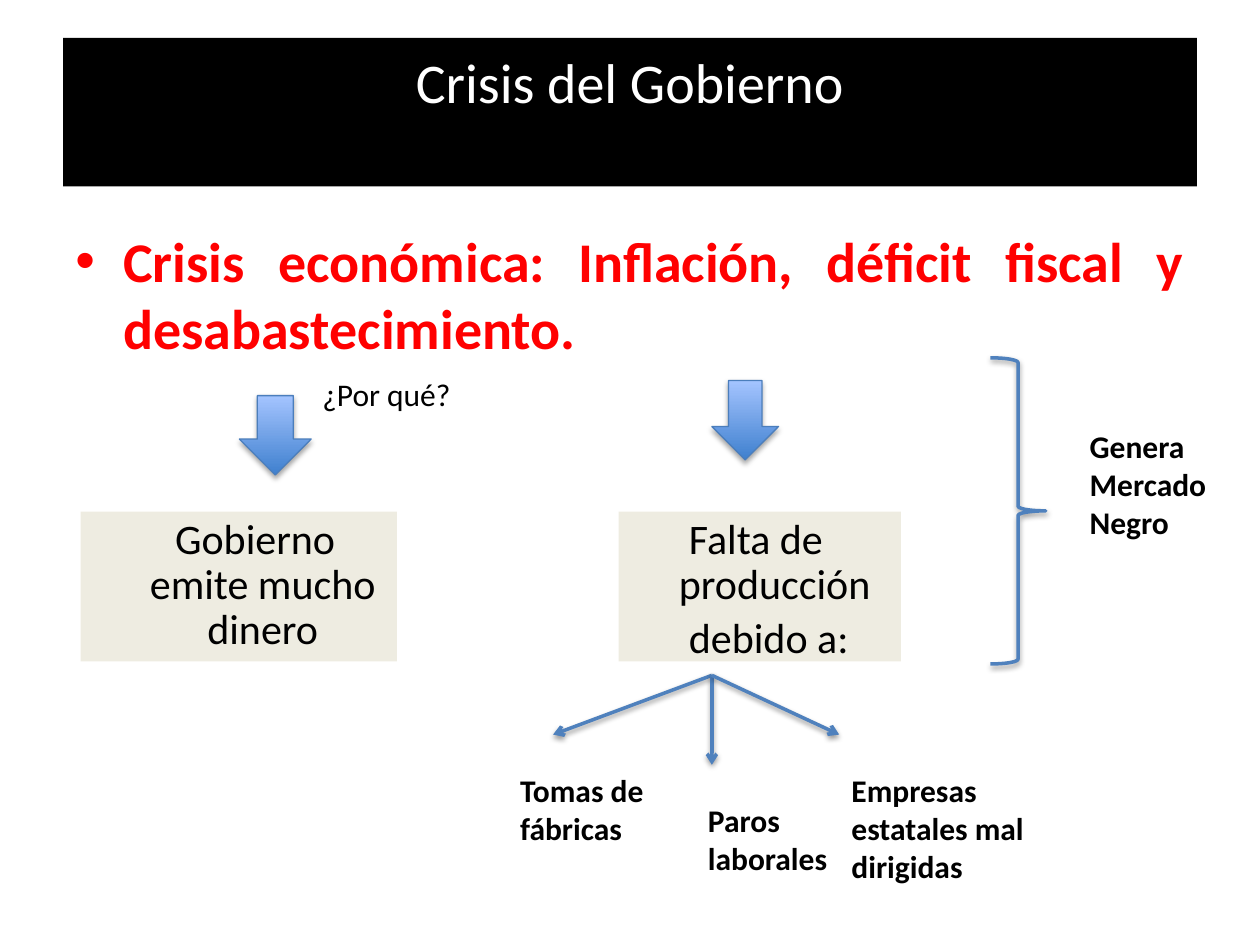
from dataclasses import dataclass

import pptx
import pptx.dml.color
import pptx.enum.dml
import pptx.enum.shapes
import pptx.enum.text
import pptx.oxml
import pptx.oxml.ns
import pptx.util
from lxml import etree

Inches, Pt = pptx.util.Inches, pptx.util.Pt
Align = pptx.enum.text.PP_ALIGN
Anchor = pptx.enum.text.MSO_ANCHOR
Preset = pptx.enum.shapes.MSO_SHAPE
qn = pptx.oxml.ns.qn


@dataclass(frozen=True)
class Theme:
    font: str = "Calibri"
    black: str = "000000"
    white: str = "FFFFFF"
    alert: str = "FF0000"
    panel: str = "EEECE1"
    accent: str = "4F81BD"
    arrow_edge: str = "4B7EBC"
    arrow_gradient: tuple[str, str] = ("3F80CE", "A4C4FF")
    heading_size: int = 32
    cause_size: int = 24
    label_size: int = 18


@dataclass(frozen=True)
class Box:
    left: float
    top: float
    width: float
    height: float

    def emu(self) -> tuple:
        return tuple(Inches(v) for v in (self.left, self.top, self.width, self.height))


@dataclass(frozen=True)
class Label:
    text: str
    box: Box
    bold: bool = True


@dataclass(frozen=True)
class Cause:
    paragraphs: tuple[str, ...]
    box: Box
    align: Align
    first_indent: float


THEME = Theme()
HANGING = 0.38

CAUSES = (
    Cause(("Gobierno emite mucho dinero",), Box(0.64, 4.06, 2.51, 1.19), Align.CENTER, -0.12),
    Cause(("Falta de producción", "debido a:"), Box(4.91, 4.06, 2.24, 1.19), Align.LEFT, 0.08),
)
DOWN_ARROWS = (Box(1.9, 3.14, 0.57, 0.63), Box(5.65, 3.02, 0.53, 0.63))
LABELS = (
    Label("¿Por qué?", Box(2.46, 2.93, 1.93, 0.4), bold=False),
    Label("Tomas de fábricas", Box(4.03, 6.07, 1.3, 0.71)),
    Label("Paros laborales", Box(5.52, 6.31, 1.32, 0.71)),
    Label("Empresas estatales mal dirigidas", Box(6.66, 6.07, 1.64, 1.01)),
    Label("Genera Mercado Negro", Box(8.55, 3.34, 1.15, 1.01)),
)
BRANCH_START = (5.65, 5.36)
BRANCH_ENDS = ((4.39, 5.83), (5.65, 6.07), (6.66, 5.83))


def rgb(color: str) -> pptx.dml.color.RGBColor:
    return pptx.dml.color.RGBColor.from_string(color)


def format_font(paragraph, size: int, color: str, bold: bool = False) -> None:
    font = paragraph.font
    font.name, font.size, font.bold = THEME.font, Pt(size), bold
    font.color.rgb = rgb(color)


def indent(paragraph, left: float, first: float) -> None:
    properties = paragraph._p.get_or_add_pPr()
    properties.set("marL", str(Inches(left)))
    properties.set("indent", str(Inches(first)))


def add_shadow(shape, distance: float, opacity: int) -> None:
    """Give the shape a soft shadow straight below; call after its line is set."""
    effects = etree.SubElement(shape._element.spPr, qn("a:effectLst"))
    shadow = etree.SubElement(
        effects, qn("a:outerShdw"), blurRad=str(Pt(3.1)), dist=str(Pt(distance)),
        dir="5400000", rotWithShape="0")
    color = etree.SubElement(shadow, qn("a:srgbClr"), val=THEME.black)
    etree.SubElement(color, qn("a:alpha"), val=str(opacity * 1000))


def format_line(shape, color: str, width: float) -> None:
    shape.line.width = Pt(width)
    shape.line.color.rgb = rgb(color)


def format_title(title) -> None:
    title.left, title.top, title.width, title.height = Box(0.5, 0.3, 9, 1.18).emu()
    title.fill.solid()
    title.fill.fore_color.rgb = rgb(THEME.black)
    frame = title.text_frame
    frame.text = "Crisis del Gobierno"
    frame.vertical_anchor = Anchor.TOP
    frame.margin_top = Inches(0.08)
    frame.paragraphs[0].alignment = Align.CENTER
    format_font(frame.paragraphs[0], THEME.heading_size, THEME.white)


def add_statement(shapes) -> None:
    frame = shapes.add_textbox(*Box(0.5, 1.75, 9, 1.2).emu()).text_frame
    frame.word_wrap = True
    paragraph = frame.paragraphs[0]
    paragraph.text = "Crisis económica: Inflación, déficit fiscal y desabastecimiento."
    paragraph.alignment = Align.JUSTIFY
    format_font(paragraph, THEME.heading_size, THEME.alert, bold=True)
    indent(paragraph, HANGING, -HANGING)
    bullet_font = pptx.oxml.parse_xml(
        f'<a:buFont {pptx.oxml.ns.nsdecls("a")} typeface="Arial"/>')
    bullet = pptx.oxml.parse_xml(f'<a:buChar {pptx.oxml.ns.nsdecls("a")} char="•"/>')
    properties = paragraph._p.get_or_add_pPr()
    properties.insert(0, bullet_font)
    properties.insert(1, bullet)


def add_label(shapes, label: Label) -> None:
    frame = shapes.add_textbox(*label.box.emu()).text_frame
    frame.word_wrap = True
    frame.text = label.text
    format_font(frame.paragraphs[0], THEME.label_size, THEME.black, label.bold)


def add_cause(shapes, cause: Cause) -> None:
    panel = shapes.add_shape(Preset.RECTANGLE, *cause.box.emu())
    panel.shadow.inherit = False
    panel.fill.solid()
    panel.fill.fore_color.rgb = rgb(THEME.panel)
    panel.line.fill.background()
    frame = panel.text_frame
    frame.word_wrap = True
    frame.vertical_anchor = Anchor.TOP
    frame.text = "\n".join(cause.paragraphs)
    for paragraph in frame.paragraphs:
        paragraph.alignment = cause.align
        paragraph.line_spacing = 0.9
        paragraph.space_before = Pt(0.2 * THEME.cause_size)
        indent(paragraph, HANGING, cause.first_indent)
        format_font(paragraph, THEME.cause_size, THEME.black)


def add_down_arrow(shapes, box: Box) -> None:
    arrow = shapes.add_shape(Preset.DOWN_ARROW, *box.emu())
    arrow.fill.gradient()
    arrow.fill.gradient_angle = 90
    for position, (stop, color) in enumerate(zip(arrow.fill.gradient_stops, THEME.arrow_gradient)):
        stop.position = position
        stop.color.rgb = rgb(color)
    format_line(arrow, THEME.arrow_edge, 0.75)
    add_shadow(arrow, 1.8, 35)


def add_branch(shapes, end: tuple[float, float]) -> None:
    points = (Inches(v) for v in (*BRANCH_START, *end))
    branch = shapes.add_connector(pptx.enum.shapes.MSO_CONNECTOR.STRAIGHT, *points)
    format_line(branch, THEME.accent, 2)
    etree.SubElement(branch.line._get_or_add_ln(), qn("a:tailEnd"), type="arrow")
    add_shadow(branch, 1.6, 38)


def add_brace(shapes) -> None:
    brace = shapes.add_shape(Preset.RIGHT_BRACE, *Box(7.86, 2.84, 0.44, 2.43).emu())
    brace.fill.background()
    format_line(brace, THEME.accent, 2)
    add_shadow(brace, 1.6, 38)


def main() -> None:
    deck = pptx.Presentation()
    deck.slide_width, deck.slide_height = Inches(10), Inches(7.5)
    shapes = deck.slides.add_slide(deck.slide_layouts.get_by_name("Title Only")).shapes
    format_title(shapes.title)
    add_statement(shapes)
    for box in DOWN_ARROWS:
        add_down_arrow(shapes, box)
    for cause in CAUSES:
        add_cause(shapes, cause)
    for end in BRANCH_ENDS:
        add_branch(shapes, end)
    add_brace(shapes)
    for label in LABELS:
        add_label(shapes, label)
    deck.save("out.pptx")


if __name__ == "__main__":
    main()
